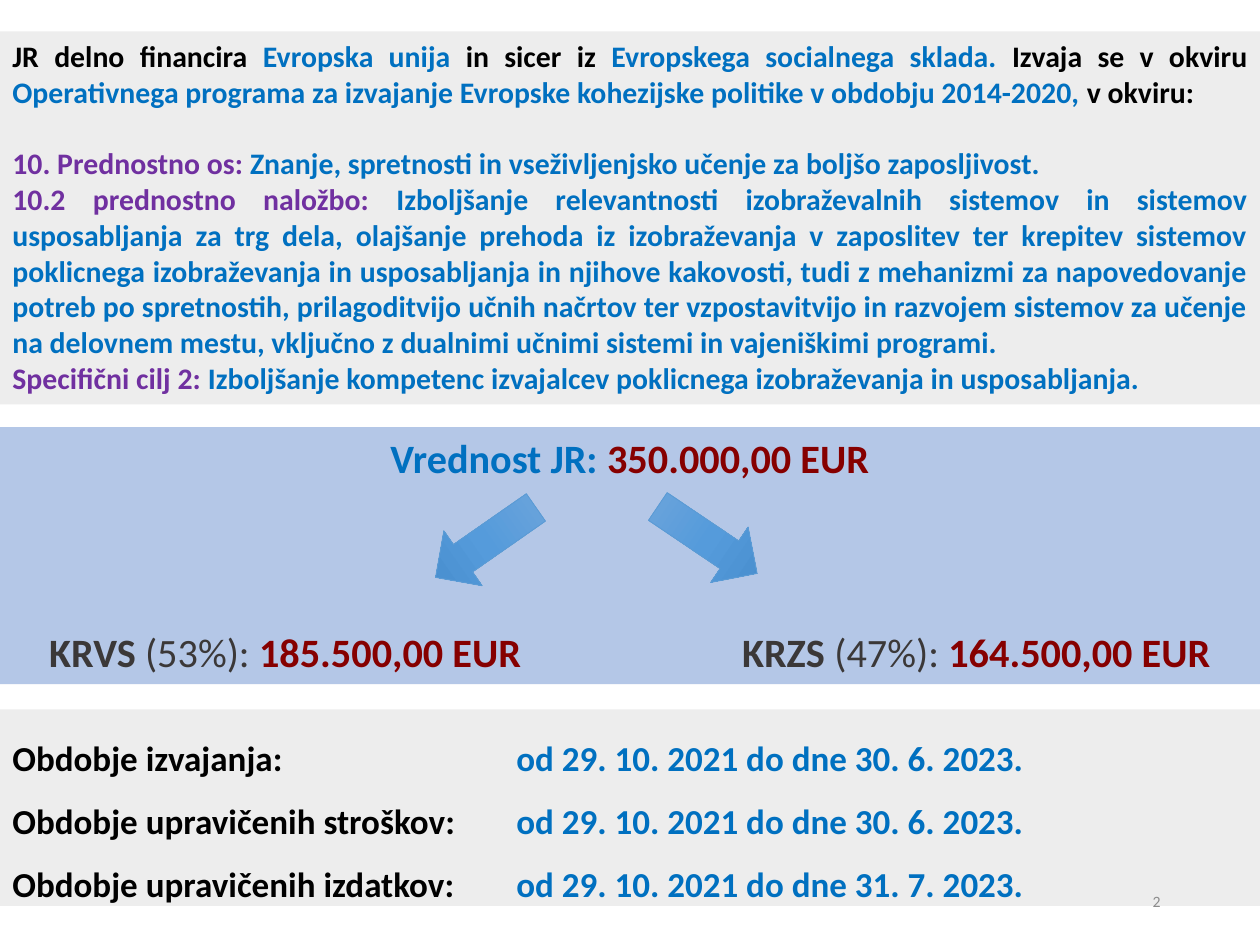
from copy import deepcopy

from lxml.etree import SubElement
from pptx import Presentation
from pptx.dml.color import RGBColor
from pptx.enum.shapes import MSO_SHAPE as Shape
from pptx.enum.text import MSO_ANCHOR as Anchor, PP_ALIGN as Align
from pptx.oxml.ns import qn
from pptx.util import Inches, Pt

BLACK, BLUE, PURPLE = "000000", "0070C0", "7030A0"
RED, CHARCOAL, GREY = "860000", "3B3838", "8C8C8C"
PANEL_GREY, PANEL_BLUE = "EDEDED", "B4C7E7"
ARROW_GRADIENT = [(0, "71A6DB"), (0.5, "559BDB"), (1, "448ACA")]

PROGRAMME = [
    [("JR delno financira ", BLACK), ("Evropska unija ", BLUE), ("in sicer iz ", BLACK),
     ("Evropskega socialnega sklada. ", BLUE), ("Izvaja se v okviru ", BLACK),
     ("Operativnega programa za izvajanje Evropske kohezijske politike v obdobju 2014-2020, ",
      BLUE), ("v okviru:", BLACK)],
    [("10. Prednostno os: ", PURPLE),
     ("Znanje, spretnosti in vseživljenjsko učenje za boljšo zaposljivost.", BLUE)],
    [("10.2 prednostno naložbo: ", PURPLE),
     ("Izboljšanje relevantnosti izobraževalnih sistemov in sistemov usposabljanja za trg "
      "dela, olajšanje prehoda iz izobraževanja v zaposlitev ter krepitev sistemov poklicnega "
      "izobraževanja in usposabljanja in njihove kakovosti, tudi z mehanizmi za napovedovanje "
      "potreb po spretnostih, prilagoditvijo učnih načrtov ter vzpostavitvijo in razvojem "
      "sistemov za učenje na delovnem mestu, vključno z dualnimi učnimi sistemi in "
      "vajeniškimi programi.", BLUE)],
    [("Specifični cilj 2: ", PURPLE),
     ("Izboljšanje kompetenc izvajalcev poklicnega izobraževanja in usposabljanja.", BLUE)],
]
TOTAL = [("Vrednost JR: ", BLUE), ("350.000,00 EUR", RED)]
SHARES = [("KRVS", "(53%): ", "185.500,00 EUR"), ("KRZS", "(47%): ", "164.500,00 EUR")]
PERIODS = [
    ("Obdobje izvajanja:", "od 29. 10. 2021 do dne 30. 6. 2023."),
    ("Obdobje upravičenih stroškov:", "od 29. 10. 2021 do dne 30. 6. 2023."),
    ("Obdobje upravičenih izdatkov:", "od 29. 10. 2021 do dne 31. 7. 2023."),
]


def color(hex_string):
    return RGBColor.from_string(hex_string)


def add_panel(slide, top, height, fill, side_margin=0.1):
    """Add a full-width band and return its text frame."""
    shape = slide.shapes.add_shape(Shape.RECTANGLE, 0, Inches(top), Inches(10), Inches(height))
    shape.shadow.inherit = False
    shape.fill.solid()
    shape.fill.fore_color.rgb = color(fill)
    shape.line.fill.background()
    frame = shape.text_frame
    frame.word_wrap = True
    frame.vertical_anchor = Anchor.TOP
    frame.margin_left = frame.margin_right = Inches(side_margin)
    return frame


def add_paragraph(frame, runs, size, align, tab=None, bold=True):
    """Fill the empty first paragraph or append one; runs are (text, colour)."""
    paragraph = frame.paragraphs[0]
    if paragraph.runs:
        paragraph = frame.add_paragraph()
    paragraph.alignment = align
    if tab:
        tabs = SubElement(paragraph._p.get_or_add_pPr(), qn("a:tabLst"))
        SubElement(tabs, qn("a:tab"), pos=str(Inches(tab)), algn="l")
    paragraph.font.name = "Calibri"
    paragraph.font.size = Pt(size)
    paragraph.font.bold = bold
    for text, text_color in runs:
        run = paragraph.add_run()
        run.text = text
        run.font.color.rgb = color(text_color)
    return paragraph


def add_programme(slide):
    frame = add_panel(slide, 0.25, 2.96, PANEL_GREY)
    paragraphs = [add_paragraph(frame, runs, 17, Align.JUSTIFY) for runs in PROGRAMME]
    paragraphs[1].space_before = Pt(20.6)


def add_value(slide):
    frame = add_panel(slide, 3.39, 2.04, PANEL_BLUE, side_margin=0.39)
    add_paragraph(frame, TOTAL, 23, Align.CENTER)
    runs = []
    for region, percent, amount in SHARES:
        separator = "\t" if runs else ""
        runs += [(f"{separator}{region} ", CHARCOAL), (percent, CHARCOAL), (amount, RED)]
    shares = add_paragraph(frame, runs, 23, Align.LEFT, tab=5.5)
    shares.space_before = Pt(83)
    for percent_run in shares.runs[1::3]:
        percent_run.font.bold = False


def add_periods(slide):
    frame = add_panel(slide, 5.63, 1.56, PANEL_GREY)
    for label, dates in PERIODS:
        runs = [(f"{label}\t", BLACK), (dates, BLUE)]
        add_paragraph(frame, runs, 20, Align.LEFT, tab=4).line_spacing = 1.5


def add_arrow(slide, left, top, height, rotation):
    arrow = slide.shapes.add_shape(
        Shape.DOWN_ARROW, Inches(left), Inches(top), Inches(0.53), Inches(height))
    arrow.rotation = rotation
    arrow.shadow.inherit = False
    arrow.line.color.rgb = color("5B9BD5")
    arrow.line.width = Pt(0.5)
    arrow.fill.gradient()
    first_stop = arrow.fill.gradient_stops[0]._gs
    first_stop.addnext(deepcopy(first_stop))
    for stop, (position, stop_color) in zip(arrow.fill.gradient_stops, ARROW_GRADIENT):
        stop.position = position
        stop.color.rgb = color(stop_color)
    arrow.fill.gradient_angle = 270


def add_slide_number(slide, number):
    box = slide.shapes.add_textbox(Inches(7.06), Inches(6.95), Inches(2.25), Inches(0.4))
    box.text_frame.word_wrap = True
    box.text_frame.vertical_anchor = Anchor.MIDDLE
    add_paragraph(box.text_frame, [(number, GREY)], 9, Align.RIGHT, bold=False)


def main():
    presentation = Presentation()
    presentation.slide_width = Inches(10)
    presentation.slide_height = Inches(7.5)
    slide = presentation.slides.add_slide(presentation.slide_layouts[6])
    add_programme(slide)
    add_value(slide)
    add_periods(slide)
    add_arrow(slide, 3.59, 3.82, 0.97, 55.1)
    add_arrow(slide, 5.35, 3.81, 0.95, 304)
    add_slide_number(slide, "2")
    presentation.save("out.pptx")


if __name__ == "__main__":
    main()
